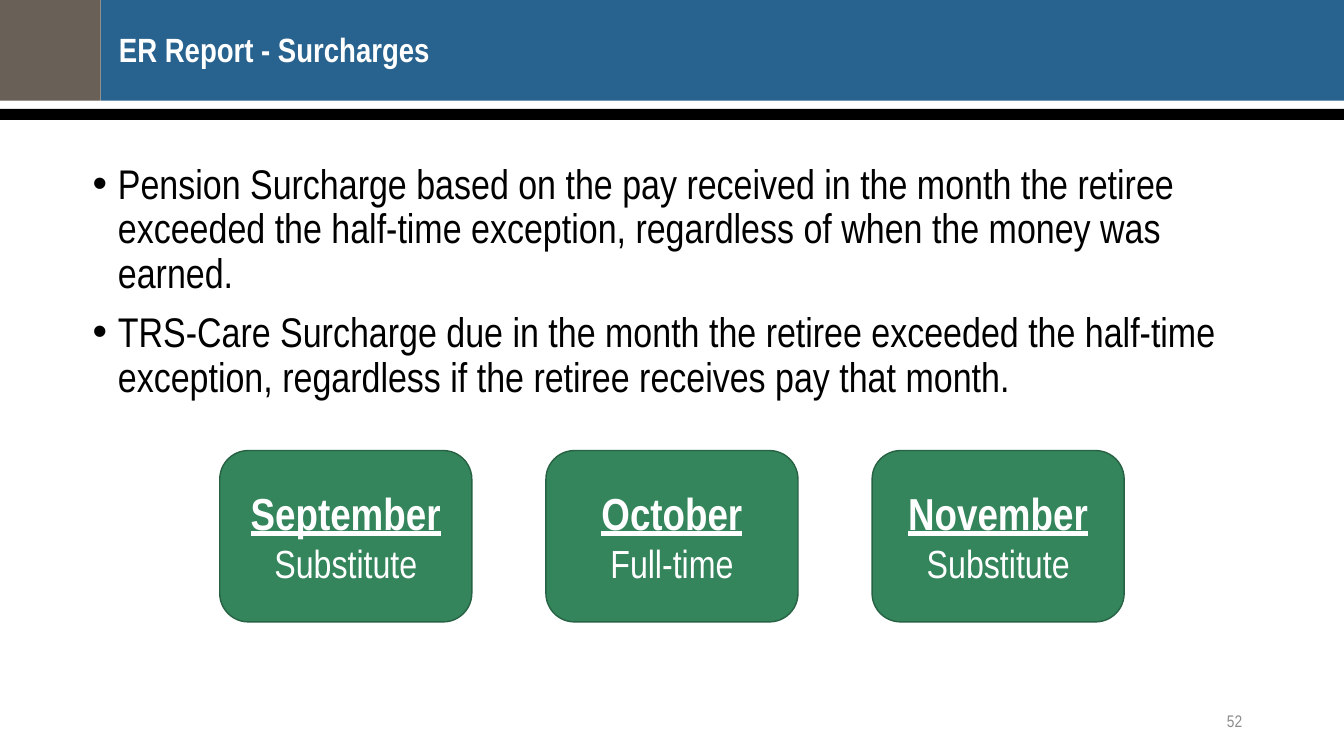
from pptx import Presentation
from pptx.dml.color import RGBColor
from pptx.enum.shapes import MSO_SHAPE
from pptx.enum.text import MSO_ANCHOR, MSO_AUTO_SIZE, PP_ALIGN
from pptx.oxml.ns import qn
from pptx.util import Inches, Pt
from lxml import etree

RECT, ROUNDED = MSO_SHAPE.RECTANGLE, MSO_SHAPE.ROUNDED_RECTANGLE
TOP, MIDDLE = MSO_ANCHOR.TOP, MSO_ANCHOR.MIDDLE
LEFT, CENTER, RIGHT = PP_ALIGN.LEFT, PP_ALIGN.CENTER, PP_ALIGN.RIGHT
FONT = "Arial Narrow"
COLORS = {
    "blue": "28628E", "taupe": "696057", "black": "000000", "white": "FFFFFF",
    "gray": "8C8C8C", "green": "34855B", "dark_green": "266243",
}


def color(name):
    return RGBColor.from_string(COLORS[name])


def add_text(tf, text, size, fill, first=True, bold=False, underline=False,
             align=LEFT, anchor=TOP, margin=None, spacing=None, before=0, bullet=False):
    tf.word_wrap = True
    tf.auto_size = MSO_AUTO_SIZE.NONE
    tf.vertical_anchor = anchor
    if margin is not None:
        tf.margin_left = tf.margin_right = tf.margin_top = tf.margin_bottom = Inches(margin)
    p = tf.paragraphs[0] if first else tf.add_paragraph()
    p.alignment = align
    p.space_before = Pt(before)
    if spacing:
        p.line_spacing = spacing
    if bullet:
        pPr = p._p.get_or_add_pPr()
        pPr.set("marL", str(Inches(0.25)))
        pPr.set("indent", str(Inches(-0.25)))
        etree.SubElement(pPr, qn("a:buFont")).set("typeface", "Arial")
        etree.SubElement(pPr, qn("a:buChar")).set("char", "•")
    r = p.add_run()
    r.text = text
    r.font.name, r.font.size = FONT, Pt(size)
    r.font.bold, r.font.underline = bold, underline
    r.font.color.rgb = color(fill)


prs = Presentation()
prs.slide_width, prs.slide_height = Inches(13.33), Inches(7.5)
s = prs.slides.add_slide(prs.slide_layouts[5])

# Header bands
for x, y, w, h, fill in [
    (1, 0, 12.33, 1, "blue"),
    (0, 0, 1, 1, "taupe"),
    (0, 1.08, 13.33, 0.11, "black"),
]:
    band = s.shapes.add_shape(RECT, Inches(x), Inches(y), Inches(w), Inches(h))
    band.shadow.inherit = False
    band.fill.solid()
    band.fill.fore_color.rgb = color(fill)
    band.line.fill.background()

# Title, brought in front of the bands
title = s.shapes.title
title.left, title.top, title.width, title.height = (
    Inches(1.18), Inches(0.33), Inches(11.23), Inches(0.56))
add_text(title.text_frame, "ER Report - Surcharges", 24, "white", bold=True,
         margin=0, spacing=0.9)
s.shapes.element.append(title.element)

# Surcharge rules
rules = [
    "Pension Surcharge based on the pay received in the month the retiree exceeded "
    "the half-time exception, regardless of when the money was earned.",
    "TRS-Care Surcharge due in the month the retiree exceeded the half-time exception, "
    "regardless if the retiree receives pay that month.",
]
body = s.shapes.add_textbox(Inches(0.92), Inches(1.62), Inches(11.23), Inches(2.42))
for i, rule in enumerate(rules):
    add_text(body.text_frame, rule, 29.6, "black", first=i == 0, margin=0,
             spacing=0.9, before=10 if i else 0, bullet=True)

# Month cards
months = [("September", "Substitute"), ("October", "Full-time"), ("November", "Substitute")]
for i, (month, work) in enumerate(months):
    card = s.shapes.add_shape(ROUNDED, Inches(2.18 + 3.235 * i), Inches(4.47),
                              Inches(2.5), Inches(1.7))
    card.shadow.inherit = False
    card.fill.solid()
    card.fill.fore_color.rgb = color("green")
    card.line.color.rgb = color("dark_green")
    card.line.width = Pt(1)
    tf = card.text_frame
    add_text(tf, month, 32, "white", bold=True, underline=True, align=CENTER, anchor=MIDDLE)
    add_text(tf, work, 28, "white", first=False, align=CENTER, anchor=MIDDLE)

# Slide number
number = s.shapes.add_textbox(Inches(9.42), Inches(6.95), Inches(3), Inches(0.4))
add_text(number.text_frame, "52", 12, "gray", align=RIGHT, anchor=MIDDLE)

prs.save("out.pptx")
